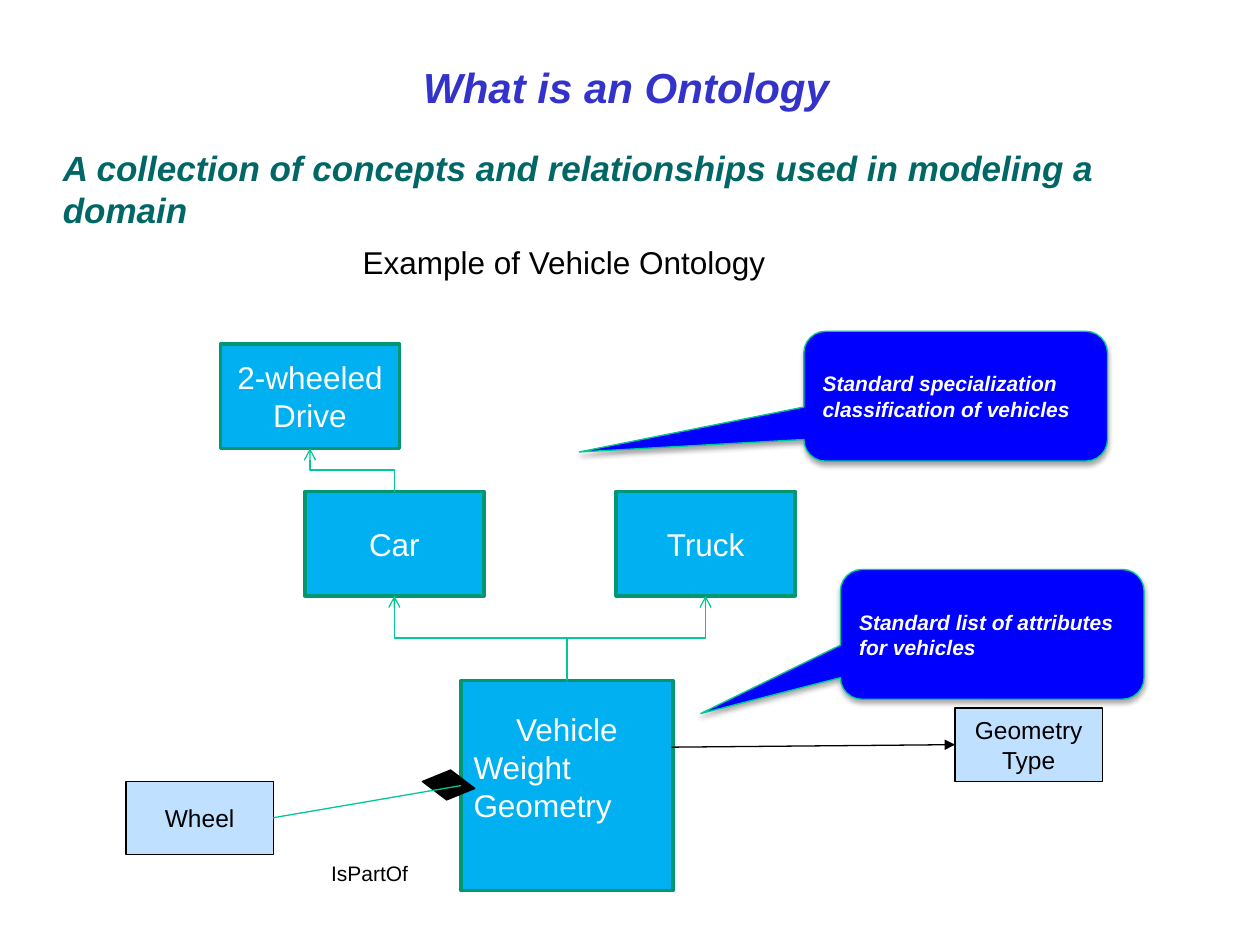
import pptx
import pptx.dml.color
import pptx.enum.shapes
import pptx.enum.text
import pptx.oxml.ns
import pptx.util
from lxml import etree

Inches = pptx.util.Inches
Pt = pptx.util.Pt
RGBColor = pptx.dml.color.RGBColor
SHAPE = pptx.enum.shapes.MSO_SHAPE
CONNECTOR = pptx.enum.shapes.MSO_CONNECTOR
ALIGN = pptx.enum.text.PP_ALIGN
ANCHOR = pptx.enum.text.MSO_ANCHOR
AUTO_SIZE = pptx.enum.text.MSO_AUTO_SIZE
qn = pptx.oxml.ns.qn

TITLE_BLUE = RGBColor(0x33, 0x33, 0xCC)
DEFINITION_TEAL = RGBColor(0x00, 0x66, 0x66)
CLASS_BLUE = RGBColor(0x00, 0xB0, 0xF0)
CLASS_EDGE = RGBColor(0x00, 0x97, 0x71)
PART_BLUE = RGBColor(0xC0, 0xE0, 0xFF)
CALLOUT_BLUE = RGBColor(0x00, 0x00, 0xFF)
LINK_GREEN = RGBColor(0x00, 0xC8, 0x96)
BLACK = RGBColor(0x00, 0x00, 0x00)
WHITE = RGBColor(0xFF, 0xFF, 0xFF)

TOP, LEFT, BOTTOM, RIGHT = range(4)
CLASS_SIZE = (1.42, 0.83)
PART_SIZE = (1.17, 0.58)
CALLOUT_SIZE = (2.41, 1.03)


def write(frame, lines, size, color, align=ALIGN.LEFT, emphasis=False, wrap=True):
    frame.word_wrap = wrap
    frame.text = "\n".join(lines)
    for paragraph in frame.paragraphs:
        paragraph.alignment = align
        font = paragraph.font
        font.name = "Arial"
        font.size = Pt(size)
        font.color.rgb = color
        font.bold = font.italic = emphasis


def add_title(slide, text):
    title = slide.shapes.title
    title.left, title.top = Inches(0.47), Inches(0.29)
    title.width, title.height = Inches(9), Inches(0.85)
    write(title.text_frame, [text], 24, TITLE_BLUE, ALIGN.CENTER, emphasis=True)
    title.text_frame.vertical_anchor = ANCHOR.MIDDLE
    title.text_frame.paragraphs[0].line_spacing = 0.9


def add_label(slide, text, box, size, color=BLACK, emphasis=False, wrap=False):
    label = slide.shapes.add_textbox(*map(Inches, box))
    write(label.text_frame, [text], size, color, emphasis=emphasis, wrap=wrap)
    label.text_frame.auto_size = AUTO_SIZE.SHAPE_TO_FIT_TEXT
    return label


def add_filled(slide, preset, position, size, fill, edge, edge_width=0.75):
    shape = slide.shapes.add_shape(preset, *map(Inches, position + size))
    shape.shadow.inherit = False
    shape.fill.solid()
    shape.fill.fore_color.rgb = fill
    shape.line.color.rgb = edge
    shape.line.width = Pt(edge_width)
    shape.text_frame.vertical_anchor = ANCHOR.MIDDLE
    return shape


def add_class(slide, lines, position, size=CLASS_SIZE):
    box = add_filled(slide, SHAPE.RECTANGLE, position, size, CLASS_BLUE, CLASS_EDGE, 2)
    write(box.text_frame, lines, 18, WHITE, ALIGN.CENTER)
    return box


def add_part(slide, lines, position):
    box = add_filled(slide, SHAPE.RECTANGLE, position, PART_SIZE, PART_BLUE, BLACK)
    write(box.text_frame, lines, 14, BLACK, ALIGN.CENTER, wrap=False)
    return box


def add_callout(slide, text, position, pointer):
    callout = add_filled(slide, SHAPE.ROUNDED_RECTANGULAR_CALLOUT, position,
                         CALLOUT_SIZE, CALLOUT_BLUE, LINK_GREEN)
    for index, value in enumerate(pointer):
        callout.adjustments[index] = value
    write(callout.text_frame, [text], 12, WHITE, emphasis=True)
    effects = callout._element.spPr.find(qn("a:effectLst"))
    shadow = etree.SubElement(effects, qn("a:outerShdw"), blurRad=str(Pt(3.1)),
                              dist=str(Pt(1.8)), dir="5400000", rotWithShape="0")
    shade = etree.SubElement(shadow, qn("a:srgbClr"), val="000000")
    etree.SubElement(shade, qn("a:alpha"), val="35000")


def style_link(link, color, arrowhead=None):
    link.line.color.rgb = color
    link.line.width = Pt(0.75)
    if arrowhead:
        etree.SubElement(link.line._get_or_add_ln(), qn("a:tailEnd"), type=arrowhead)
    etree.SubElement(link._element.spPr, qn("a:effectLst"))


def add_straight(slide, start, end, color, arrowhead=None):
    link = slide.shapes.add_connector(CONNECTOR.STRAIGHT, *map(Inches, start + end))
    style_link(link, color, arrowhead)
    return link


def add_specialization(slide, lower, upper):
    """Join the top of lower to the bottom of upper by a vertical-first elbow."""
    link = slide.shapes.add_connector(CONNECTOR.ELBOW, 0, 0, 0, 0)
    link.begin_connect(lower, TOP)
    link.end_connect(upper, BOTTOM)
    start_x, start_y = lower.left + lower.width // 2, lower.top
    end_x, end_y = upper.left + upper.width // 2, upper.top + upper.height
    rise, run = start_y - end_y, abs(end_x - start_x)
    # The elbow is stored lying down and turned a quarter about its centre.
    link.left = (start_x + end_x - rise) // 2
    link.top = (start_y + end_y - run) // 2
    link.width, link.height = rise, run
    goes_right = end_x > start_x
    transform = link._element.spPr.find(qn("a:xfrm"))
    transform.set("rot", "5400000" if goes_right else "16200000")
    transform.set("flipH", "1" if goes_right else "0")
    transform.set("flipV", "1")
    style_link(link, LINK_GREEN, "arrow")


def main():
    deck = pptx.Presentation()
    deck.slide_width, deck.slide_height = Inches(10), Inches(7.5)
    slide = deck.slides.add_slide(deck.slide_layouts[5])

    add_title(slide, "What is an Ontology")
    add_label(slide, "A collection of concepts and relationships used in modeling a domain",
              (0.4, 1.11, 9.22, 0.77), 20, DEFINITION_TEAL, emphasis=True, wrap=True)
    add_label(slide, "Example of Vehicle Ontology", (2.78, 1.88, 3.43, 0.4), 18)

    car = add_class(slide, ["Car"], (2.42, 3.9))
    truck = add_class(slide, ["Truck"], (4.89, 3.9))
    vehicle = add_class(slide, ["Vehicle", "Weight", "Geometry"], (3.66, 5.4), (1.68, 1.67))
    vehicle.text_frame.margin_bottom = Inches(0.35)
    for attribute in vehicle.text_frame.paragraphs[1:]:
        attribute.alignment = ALIGN.LEFT
    two_wheeled = add_class(slide, ["2-wheeled", "Drive"], (1.75, 2.73))
    for lower, upper in ((vehicle, car), (vehicle, truck), (car, two_wheeled)):
        add_specialization(slide, lower, upper)

    geometry_type = add_part(slide, ["Geometry", "Type"], (7.58, 5.62))
    geometry_link = add_straight(slide, (5.33, 5.93), (7.58, 5.91), BLACK, "triangle")
    geometry_link.end_connect(geometry_type, LEFT)

    part_label = add_label(slide, "IsPartOf", (2.53, 6.78, 0.81, 0.3), 12)
    part_label.fill.solid()
    part_label.fill.fore_color.rgb = WHITE
    diamond = add_filled(slide, SHAPE.DIAMOND, (3.44, 6.02), (0.24, 0.42), BLACK, BLACK)
    diamond.rotation = 97.5
    wheel = add_part(slide, ["Wheel"], (1, 6.2))
    wheel_link = add_straight(slide, (2.17, 6.49), (3.66, 6.23), LINK_GREEN)
    wheel_link.begin_connect(wheel, RIGHT)
    wheel_link.end_connect(vehicle, LEFT)

    add_callout(slide, "Standard specialization classification of vehicles",
                (6.38, 2.63), (-1.24, 0.43))
    add_callout(slide, "Standard list of attributes for vehicles",
                (6.67, 4.52), (-0.96, 0.61))

    deck.save("out.pptx")


if __name__ == "__main__":
    main()
